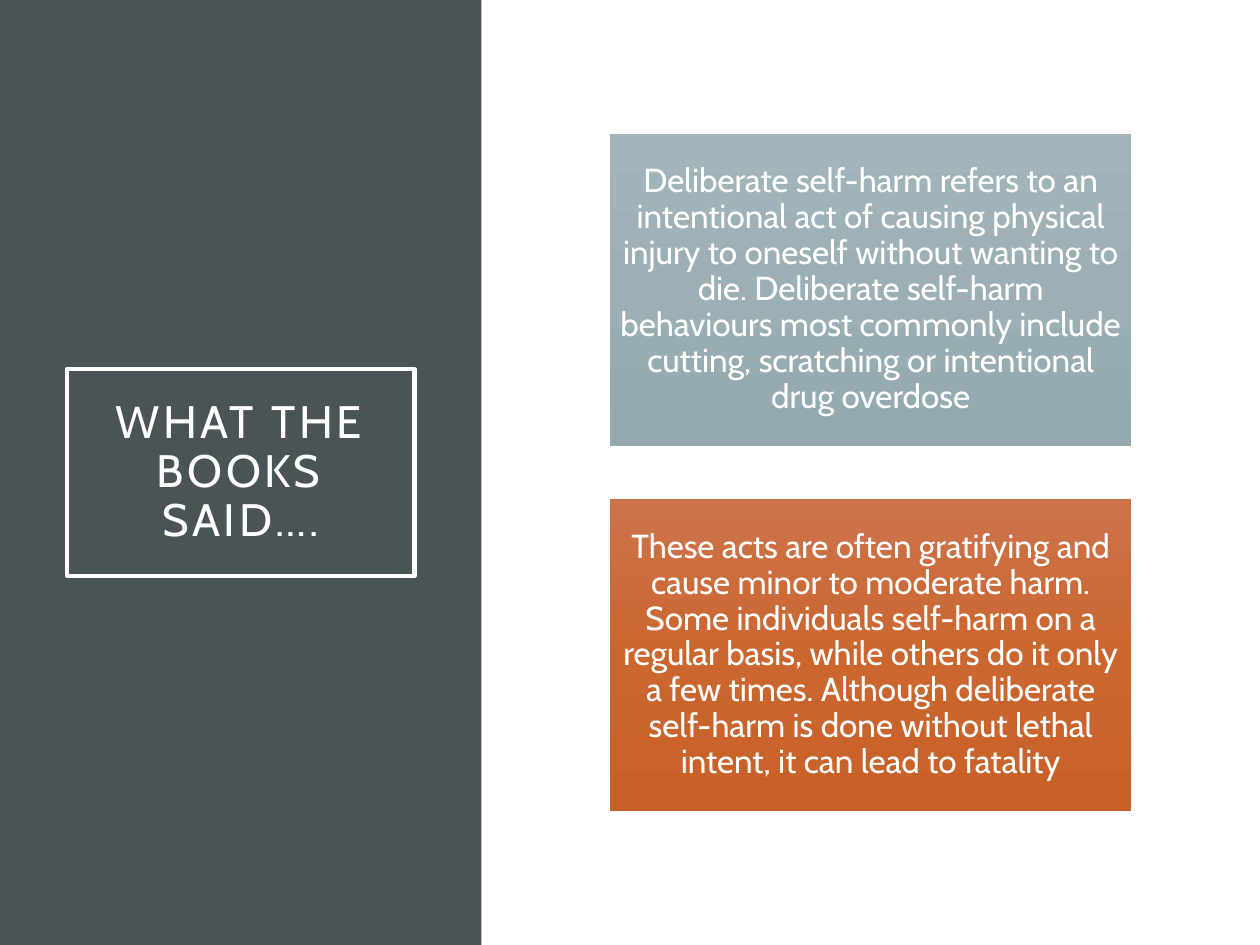
"""Build a slide with a title panel and two statement cards."""
from copy import deepcopy

from pptx import Presentation, util as u
from pptx.dml.color import RGBColor
from pptx.enum import shapes, text
from pptx.oxml.ns import qn

TITLE = "WHAT THE BOOKS SAID…."
CARDS = [
    ("Deliberate self-harm refers to an intentional act of causing physical "
     "injury to oneself without wanting to die. Deliberate self-harm "
     "behaviours most commonly include cutting, scratching or intentional "
     "drug overdose", "blue"),
    ("These acts are often gratifying and cause minor to moderate harm. "
     "Some individuals self-harm on a regular basis, while others do it only "
     "a few times. Although deliberate self-harm is done without lethal "
     "intent, it can lead to fatality", "orange"),
]
COLORS = {
    "panel": "4A5356",
    "white": "FFFFFF",
    "blue": ["A3B5BB", "9BAFB5", "93A9AF"],
    "orange": ["CC734B", "CB662F", "C86128"],
}
FONT = "Cabin"
LEFT, TOP, WIDTH, HEIGHT, GAP = 4.84, 1.06, 4.14, 2.48, 0.42


def rgb(name):
    return RGBColor.from_string(COLORS[name])


def add_box(slide, *place):
    box = slide.shapes.add_shape(
        shapes.MSO_SHAPE.RECTANGLE, *map(u.Inches, place))
    box.shadow.inherit = False
    box.fill.background()
    box.line.fill.background()
    return box


def write(box, words, size, inset, track=0):
    frame = box.text_frame
    frame.word_wrap = True
    frame.vertical_anchor = text.MSO_ANCHOR.MIDDLE
    for side in ("left", "top", "right", "bottom"):
        setattr(frame, f"margin_{side}", u.Inches(inset))
    para = frame.paragraphs[0]
    para.alignment = text.PP_ALIGN.CENTER
    para.line_spacing = 0.9
    run = para.add_run()
    run.text = words
    run.font.name = FONT
    run.font.size = u.Pt(size)
    run.font.color.rgb = rgb("white")
    if track:
        run.font._element.set("spc", str(track * 100))


def shade(box, tones):
    box.fill.gradient()
    box.fill.gradient_angle = 270
    stops = box._element.spPr.find(".//" + qn("a:gsLst"))
    stops.append(deepcopy(stops[-1]))
    for i, (stop, tone) in enumerate(zip(box.fill.gradient_stops, tones)):
        stop.position = i / (len(tones) - 1)
        stop.color.rgb = RGBColor.from_string(tone)


def main():
    deck = Presentation()
    deck.slide_width, deck.slide_height = u.Inches(10), u.Inches(7.5)
    slide = deck.slides.add_slide(deck.slide_layouts[6])

    panel = add_box(slide, 0, 0, 3.82, 7.5)
    panel.fill.solid()
    panel.fill.fore_color.rgb = rgb("panel")

    title = add_box(slide, 0.53, 2.93, 2.76, 1.64)
    title.line.color.rgb = rgb("white")
    title.line.width = u.Pt(2.5)
    write(title, TITLE, size=26, inset=0.2, track=2)

    for i, (words, tone) in enumerate(CARDS):
        card = add_box(slide, LEFT, TOP + i * (HEIGHT + GAP), WIDTH, HEIGHT)
        shade(card, COLORS[tone])
        write(card, words, size=19, inset=0.08)

    deck.save("out.pptx")


if __name__ == "__main__":
    main()
